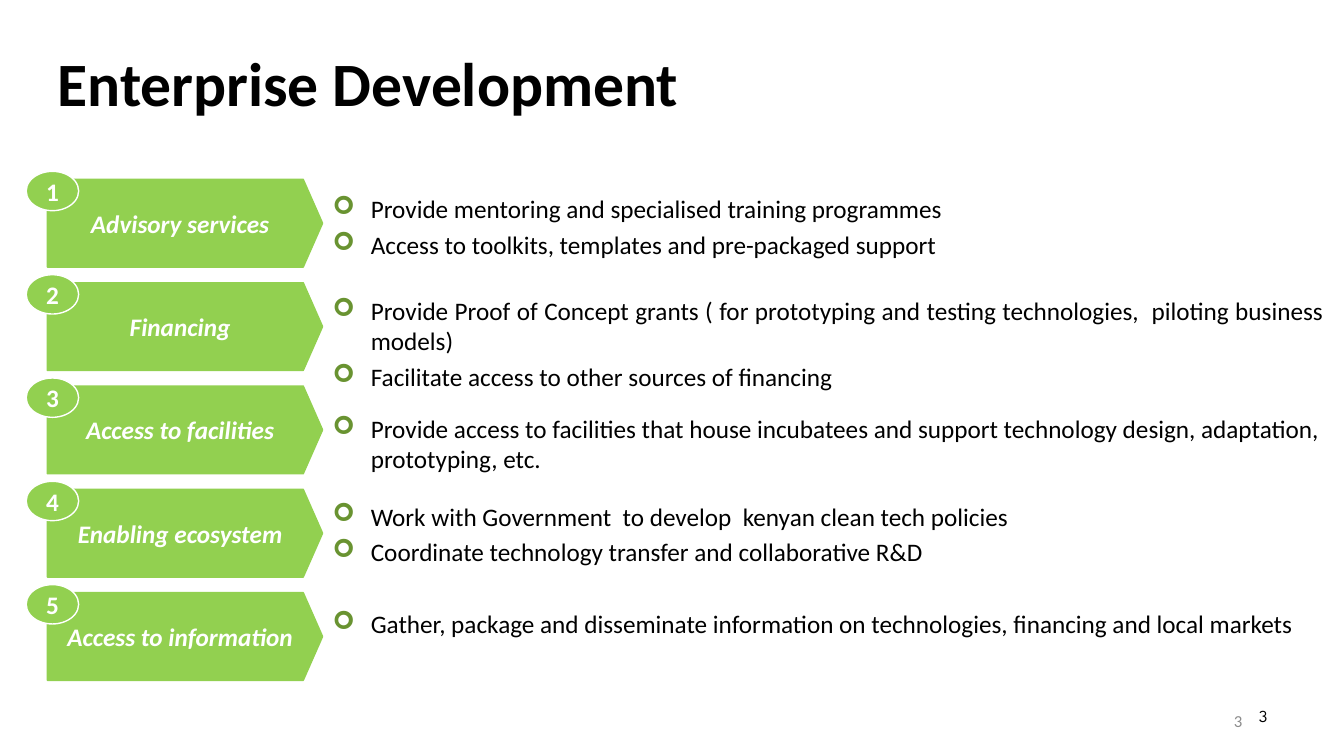
from lxml import etree
from pptx import Presentation, util as u
from pptx.dml.color import RGBColor
from pptx.enum import shapes, text
from pptx.oxml import ns

# Content: label, top of its notes, width, alignment, notes
TITLE = "Enterprise Development"
LEFT, JUST = text.PP_ALIGN.LEFT, text.PP_ALIGN.JUSTIFY
ROWS = [
    ("Advisory services", 187, 1003, LEFT, [
        "Provide mentoring and specialised training programmes",
        "Access to toolkits, templates and pre-packaged support"]),
    ("Financing", 288, 1003, JUST, [
        "Provide Proof of Concept grants ( for prototyping and testing "
        "technologies,  piloting business models)",
        "Facilitate access to other sources of financing"]),
    ("Access to facilities", 405, 1013, LEFT, [
        "Provide access to facilities that house incubatees and support "
        "technology design, adaptation, prototyping, etc."]),
    ("Enabling ecosystem", 492, 1003, LEFT, [
        "Work with Government  to develop  kenyan clean tech policies",
        "Coordinate technology transfer and collaborative R&D"]),
    ("Access to information", 599, 1003, LEFT, [
        "Gather, package and disseminate information on technologies, "
        "financing and local markets"]),
]
BLACK = RGBColor(0, 0, 0)
WHITE = RGBColor(255, 255, 255)
GREY = RGBColor(0x8C, 0x8C, 0x8C)
GREEN = RGBColor(0x92, 0xD0, 0x50)
DARK = RGBColor(0x69, 0x93, 0x31)
FONT = "Calibri"
MID = text.MSO_ANCHOR.MIDDLE

# Lengths in px, 100 to the inch
PX = 9144
TOP, PITCH = 178, 102.5
INDENT = 38


def box(*px):
    return [round(n * PX) for n in px]


def style(para, size, color, align, bold=None, italic=None, face=FONT):
    para.alignment = align
    font = para.font
    font.name, font.size, font.color.rgb = face, u.Pt(size), color
    font.bold, font.italic = bold, italic


def add_text(place):
    frame = slide.shapes.add_textbox(*box(*place)).text_frame
    frame.word_wrap = True
    return frame


def add_shape(kind, place, line, label, italic=None):
    shape = slide.shapes.add_shape(kind, *box(*place))
    shape.shadow.inherit = False
    shape.fill.solid()
    shape.fill.fore_color.rgb = GREEN
    shape.line.color.rgb = line
    shape.line.width = u.Pt(1)
    frame = shape.text_frame
    frame.text, frame.vertical_anchor = label, MID
    style(frame.paragraphs[0], 18, WHITE, text.PP_ALIGN.CENTER, True, italic)
    return shape


def add_bullet(para):
    props = para._p.get_or_add_pPr()
    props.set("marL", str(INDENT * PX))
    props.set("indent", str(-INDENT * PX))
    color = etree.SubElement(props, ns.qn("a:buClr"))
    etree.SubElement(color, ns.qn("a:srgbClr"), val=str(DARK))
    etree.SubElement(props, ns.qn("a:buFont"), typeface="Wingdings")
    etree.SubElement(props, ns.qn("a:buChar"), char="➢")


deck = Presentation()
deck.slide_width, deck.slide_height = box(1333, 750)
slide = deck.slides.add_slide(deck.slide_layouts[5])

# Title
title = slide.shapes.title
title.left, title.top, title.width, title.height = box(47, 25, 1150, 122)
title.text_frame.text = TITLE
title.text_frame.vertical_anchor = MID
head = title.text_frame.paragraphs[0]
head.line_spacing = 0.9
style(head, 44, BLACK, LEFT, True)

# Page numbers
for place, color, face, anchor in [
        ((1195, 695, 47, 40), GREY, FONT, MID),
        ((956, 695, 311, 40), BLACK, "League Spartan", text.MSO_ANCHOR.TOP)]:
    frame = add_text(place)
    frame.text, frame.vertical_anchor = "3", anchor
    style(frame.paragraphs[0], 12, color, text.PP_ALIGN.RIGHT, face=face)

# Rows: arrow, number badge and notes
for i, (label, top, width, align, notes) in enumerate(ROWS):
    y = TOP + i * PITCH
    arrow = add_shape(shapes.MSO_SHAPE.PENTAGON, (47, y, 273, 87),
                      GREEN, label, True)
    arrow.adjustments[0] = 0.22
    add_shape(shapes.MSO_SHAPE.OVAL, (26, y - 8, 52, 39), WHITE, str(i + 1))
    frame = add_text((320, top, width, 87))
    for j, note in enumerate(notes):
        para = frame.add_paragraph() if j else frame.paragraphs[0]
        para.text = note
        if j:
            para.space_before = u.Pt(4)
        add_bullet(para)
        style(para, 18, BLACK, align)

deck.save("out.pptx")
